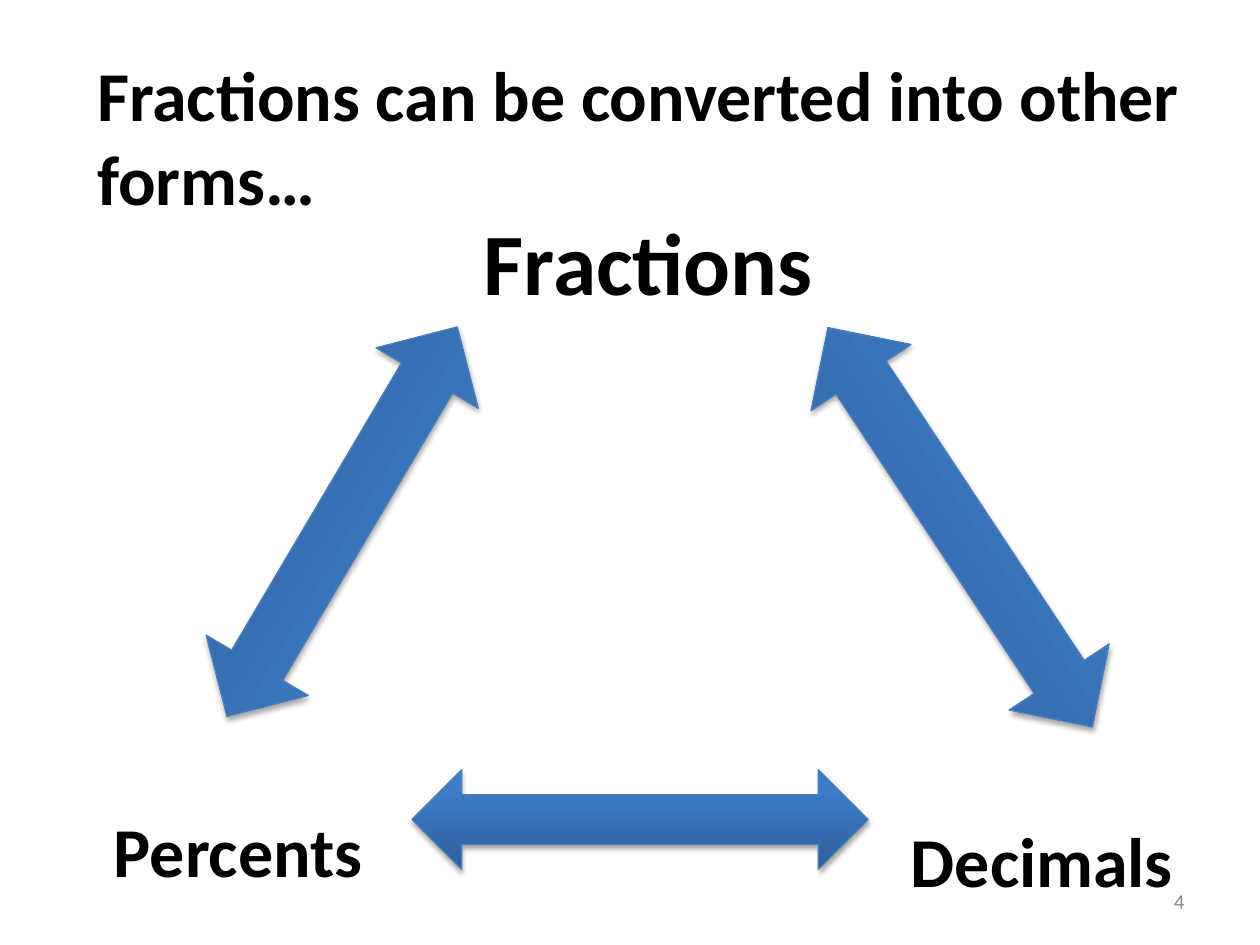
from dataclasses import dataclass

from pptx import Presentation
from pptx.dml.color import RGBColor
from pptx.enum.shapes import MSO_SHAPE
from pptx.enum.text import MSO_ANCHOR, MSO_AUTO_SIZE, PP_ALIGN
from pptx.oxml import parse_xml
from pptx.oxml.ns import nsdecls, qn
from pptx.util import Inches, Pt

BLACK = RGBColor(0x00, 0x00, 0x00)
GREY = RGBColor(0x8C, 0x8C, 0x8C)
ARROW_LINE = RGBColor(0x4B, 0x7E, 0xBC)
ARROW_STOPS = (
    (0, RGBColor(0x2F, 0x5F, 0x99)),
    (80, RGBColor(0x3D, 0x7C, 0xC7)),
    (100, RGBColor(0x3A, 0x7C, 0xCB)),
)


@dataclass
class Box:
    left: float
    top: float
    width: float
    height: float

    def lengths(self) -> tuple:
        return tuple(Inches(v) for v in (self.left, self.top, self.width, self.height))


@dataclass
class Arrow:
    box: Box
    rotation: float = 0


ARROWS = (
    Arrow(Box(3.27, 6.11, 3.62, 0.79)),
    Arrow(Box(0.92, 3.67, 3.59, 0.94), 120.6),
    Arrow(Box(5.72, 3.71, 3.8, 0.95), 56.5),
)


def write_text(shape, text: str, *, size: float, bold: bool = True,
               color: RGBColor = BLACK, align=PP_ALIGN.LEFT,
               anchor=MSO_ANCHOR.TOP, margin_left: float = 0.1,
               margin_top: float = 0.05) -> None:
    """Put one formatted paragraph into a shape."""
    frame = shape.text_frame
    frame.word_wrap = True
    frame.auto_size = MSO_AUTO_SIZE.NONE
    frame.vertical_anchor = anchor
    frame.margin_left = Inches(margin_left)
    frame.margin_top = Inches(margin_top)
    paragraph = frame.paragraphs[0]
    paragraph.alignment = align
    run = paragraph.add_run()
    run.text = text
    run.font.name = "Calibri"
    run.font.size = Pt(size)
    run.font.bold = bold
    run.font.color.rgb = color


def place(shape, box: Box) -> None:
    shape.left, shape.top, shape.width, shape.height = box.lengths()


def draw_arrow(slide, arrow: Arrow) -> None:
    """Draw a double arrow with a gradient fill and a soft shadow."""
    shape = slide.shapes.add_shape(MSO_SHAPE.LEFT_RIGHT_ARROW, *arrow.box.lengths())
    shape.rotation = arrow.rotation
    shape.fill.gradient()
    shape.fill.gradient_angle = 90
    shape.line.color.rgb = ARROW_LINE
    shape.line.width = Pt(0.75)
    shape.shadow.inherit = False

    # Three gradient stops
    properties = shape._element.spPr
    stops = properties.find(qn("a:gradFill")).find(qn("a:gsLst"))
    for stop in list(stops):
        stops.remove(stop)
    for position, color in ARROW_STOPS:
        stops.append(parse_xml(
            f'<a:gs {nsdecls("a")} pos="{position * 1000}">'
            f'<a:srgbClr val="{color}"/></a:gs>'))

    # Shadow straight below
    properties.find(qn("a:effectLst")).append(parse_xml(
        f'<a:outerShdw {nsdecls("a")} blurRad="{Pt(3.1)}" dist="{Pt(1.8)}" '
        'dir="5400000" rotWithShape="0"><a:srgbClr val="000000">'
        '<a:alpha val="35000"/></a:srgbClr></a:outerShdw>'))


def main() -> None:
    presentation = Presentation()
    presentation.slide_width = Inches(10)
    presentation.slide_height = Inches(7.5)
    slide = presentation.slides.add_slide(presentation.slide_layouts[1])

    # Title at the top of the triangle
    title = slide.shapes.title
    place(title, Box(3.43, 1.65, 3.54, 1.5))
    write_text(title, "Fractions", size=50, margin_left=0.41, margin_top=0)

    # Opening statement, without a bullet
    body = slide.placeholders[1]
    place(body, Box(0.67, 0.36, 8.83, 1.73))
    write_text(body, "Fractions can be converted into other forms…", size=40)
    paragraph_properties = body.text_frame.paragraphs[0]._p.get_or_add_pPr()
    paragraph_properties.set("marL", "0")
    paragraph_properties.set("indent", "0")
    paragraph_properties.append(parse_xml(f'<a:buNone {nsdecls("a")}/>'))

    # Slide number
    number = slide.shapes.add_textbox(*Box(7.17, 6.95, 2.33, 0.4).lengths())
    write_text(number, "4", size=12, bold=False, color=GREY,
               align=PP_ALIGN.RIGHT, anchor=MSO_ANCHOR.MIDDLE)

    # Lower corners of the triangle
    for text, box, align in (
        ("Decimals", Box(7.13, 5.88, 2.48, 1.18), PP_ALIGN.LEFT),
        ("Percents", Box(0.67, 5.8, 2.44, 1.18), PP_ALIGN.CENTER),
    ):
        label = slide.shapes.add_textbox(*box.lengths())
        write_text(label, text, size=40, align=align, margin_top=0.61)

    # Sides of the triangle
    for arrow in ARROWS:
        draw_arrow(slide, arrow)

    presentation.save("out.pptx")


if __name__ == "__main__":
    main()
